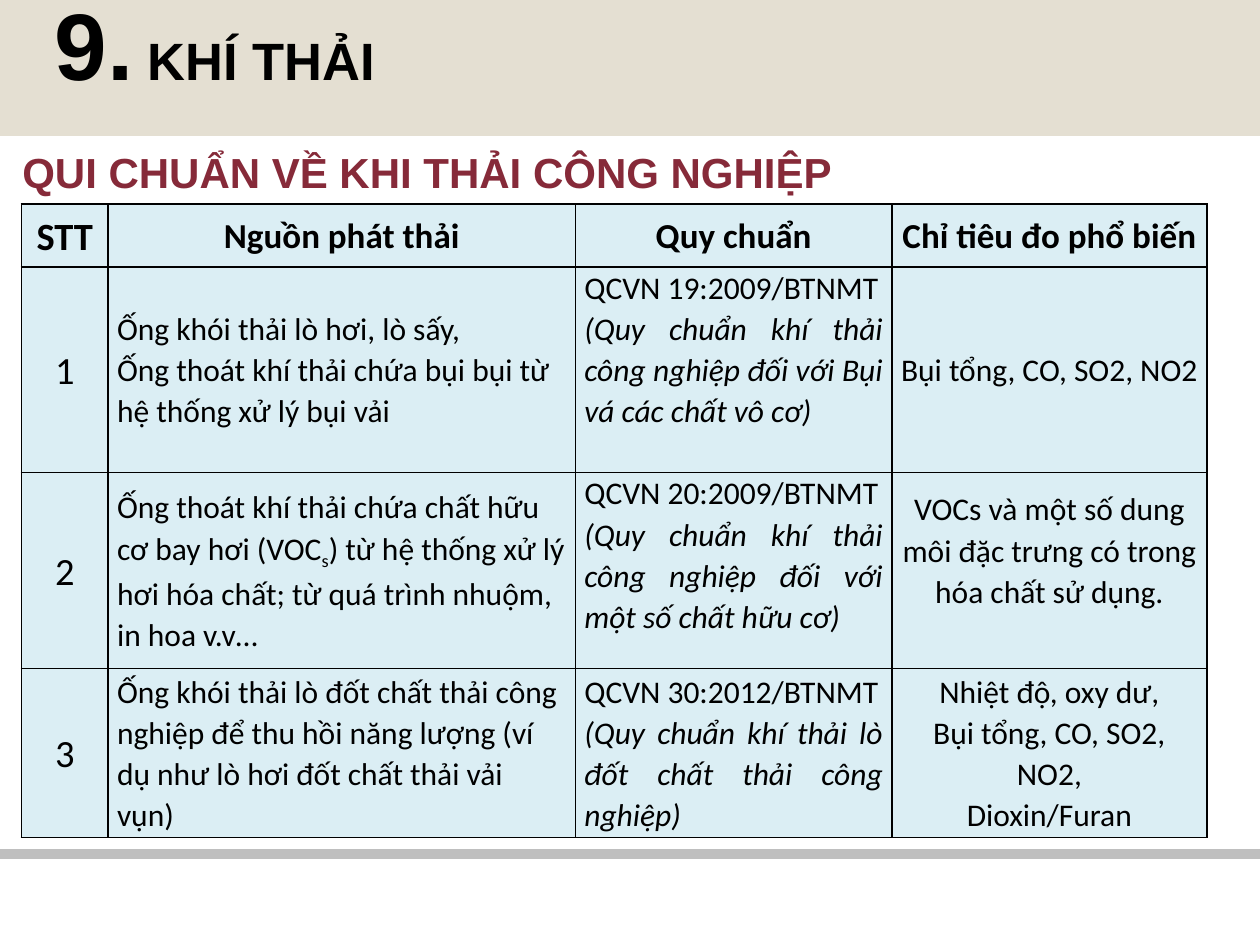
import pptx
import pptx.dml.color
import pptx.enum.shapes
import pptx.enum.text
import pptx.oxml
import pptx.oxml.ns
import pptx.util

Cm, Pt = pptx.util.Cm, pptx.util.Pt
ALIGN = pptx.enum.text.PP_ALIGN
ANCHOR = pptx.enum.text.MSO_ANCHOR
SIZE = pptx.enum.text.MSO_AUTO_SIZE

HEAD = ["STT", "Nguồn phát thải", "Quy chuẩn", "Chỉ tiêu đo phổ biến"]
ROWS = [
    ["1",
     "Ống khói thải lò hơi, lò sấy,\n"
     "Ống thoát khí thải chứa bụi bụi từ hệ thống xử lý bụi vải",
     "QCVN 19:2009/BTNMT\n"
     "(Quy chuẩn khí thải công nghiệp đối với Bụi vá các chất vô cơ)",
     "Bụi tổng, CO, SO2, NO2"],
    ["2",
     "Ống thoát khí thải chứa chất hữu cơ bay hơi (VOC~s~) từ hệ thống xử lý "
     "hơi hóa chất; từ quá trình nhuộm, in hoa v.v…",
     "QCVN 20:2009/BTNMT\n"
     "(Quy chuẩn khí thải công nghiệp đối với một số chất hữu cơ)",
     "VOCs và một số dung môi đặc trưng có trong hóa chất sử dụng."],
    ["3",
     "Ống khói thải lò đốt chất thải công nghiệp để thu hồi năng lượng "
     "(ví dụ như lò hơi đốt chất thải vải vụn)",
     "QCVN 30:2012/BTNMT\n"
     "(Quy chuẩn khí thải lò đốt chất thải công nghiệp)",
     "Nhiệt độ, oxy dư,\nBụi tổng, CO, SO2, NO2,\nDioxin/Furan"],
]
WIDTHS = [1.75, 9.42, 6.38, 6.35]
HEIGHTS = [1.27, 4.14, 3.96, 3.4]
TOPS = {(1, 2), (2, 2)}
LIFTS = {(2, 3): 0.83}


def tint(hue):
    """Turn a hex string into a colour."""
    return pptx.dml.color.RGBColor.from_string(hue)


def style(font, size, hue="000000", face="Calibri", bold=False):
    """Set the look of a font."""
    font.name, font.size, font.bold = face, Pt(size), bold
    font.color.rgb = tint(hue)


def bar(slide, top, high, hue, line=0):
    """Draw a full-width bar behind everything else."""
    box = slide.shapes.add_shape(pptx.enum.shapes.MSO_SHAPE.RECTANGLE,
                                 0, Cm(top), Cm(25.4), Cm(high))
    box.shadow.inherit = False
    box.fill.solid()
    box.fill.fore_color.rgb = tint(hue)
    if line:
        box.line.color.rgb = tint(hue)
        box.line.width = Pt(line)
    else:
        box.line.fill.background()
    slide.shapes._spTree.insert(2, box._element)


def edge(cell):
    """Draw a thin black border round a cell."""
    props = cell._tc.get_or_add_tcPr()
    for spot, side in enumerate(("lnL", "lnR", "lnT", "lnB")):
        props.insert(spot, pptx.oxml.parse_xml(
            f'<a:{side} {pptx.oxml.ns.nsdecls("a")} w="12700"><a:solidFill>'
            f'<a:srgbClr val="000000"/></a:solidFill></a:{side}>'))


def write(cell, text, row, col):
    """Fill one cell of the table."""
    cell.fill.solid()
    cell.fill.fore_color.rgb = tint("DBEEF4")
    edge(cell)
    cell.margin_left = cell.margin_right = Cm(0.18)
    cell.margin_top = 0
    cell.margin_bottom = Cm(LIFTS.get((row, col), 0))
    cell.vertical_anchor = ANCHOR.TOP if (row, col) in TOPS else ANCHOR.MIDDLE
    size = 22 if col == 0 else 18 if row else 20
    frame = cell.text_frame
    for num, line in enumerate(text.split("\n")):
        para = frame.add_paragraph() if num else frame.paragraphs[0]
        note = row > 0 and col == 2 and num == 1
        mid = row == 0 or col in (0, 3)
        para.alignment = (ALIGN.CENTER if mid else
                          ALIGN.JUSTIFY if note else ALIGN.LEFT)
        para.line_spacing = 1.07
        style(para.font, size, bold=row == 0)
        para.font.italic = note
        for part, words in enumerate(line.split("~")):
            run = para.add_run()
            run.text = words
            if part % 2:
                run.font._element.set("baseline", "-25000")


def title(slide):
    """Place the slide title."""
    box = slide.shapes.title
    box.left, box.top, box.width, box.height = map(Cm, (1.1, 0.84, 16.5, 1.17))
    frame = box.text_frame
    frame.margin_left = frame.margin_right = 0
    frame.margin_top = frame.margin_bottom = 0
    frame.vertical_anchor = ANCHOR.TOP
    frame.auto_size = SIZE.NONE
    para = frame.paragraphs[0]
    para.alignment = ALIGN.LEFT
    para.line_spacing = Pt(32.7)
    style(para.font, 30, face="Arial", bold=True)
    for words, size in (("9.", 54), (" KHÍ THẢI", 30)):
        run = para.add_run()
        run.text = words
        run.font.size = Pt(size)


def label(slide):
    """Place the heading above the table."""
    box = slide.shapes.add_textbox(Cm(0.2), Cm(2.82), Cm(16.84), Cm(1.27))
    frame = box.text_frame
    frame.word_wrap = False
    frame.auto_size = SIZE.SHAPE_TO_FIT_TEXT
    frame.vertical_anchor = ANCHOR.MIDDLE
    para = frame.paragraphs[0]
    para.text = "QUI CHUẨN VỀ KHI THẢI CÔNG NGHIỆP"
    para.alignment = ALIGN.JUSTIFY
    style(para.font, 24, "862A39", "Arial", True)


def grid(slide):
    """Build the table of standards."""
    data = [HEAD] + ROWS
    table = slide.shapes.add_table(
        len(data), len(HEAD), Cm(0.43), Cm(4.11),
        Cm(sum(WIDTHS)), Cm(sum(HEIGHTS))).table
    for col, wide in zip(table.columns, WIDTHS):
        col.width = Cm(wide)
    for row, high in zip(table.rows, HEIGHTS):
        row.height = Cm(high)
    for row, texts in enumerate(data):
        for col, text in enumerate(texts):
            write(table.cell(row, col), text, row, col)


def main():
    """Build and save the slide."""
    deck = pptx.Presentation()
    deck.slide_width, deck.slide_height = Cm(25.4), Cm(19.05)
    slide = deck.slides.add_slide(deck.slide_layouts[5])
    bar(slide, 0, 2.74, "E4DFD2")
    bar(slide, 17.15, 0.13, "BFBFBF", 2)
    title(slide)
    grid(slide)
    label(slide)
    deck.save("out.pptx")


if __name__ == "__main__":
    main()
